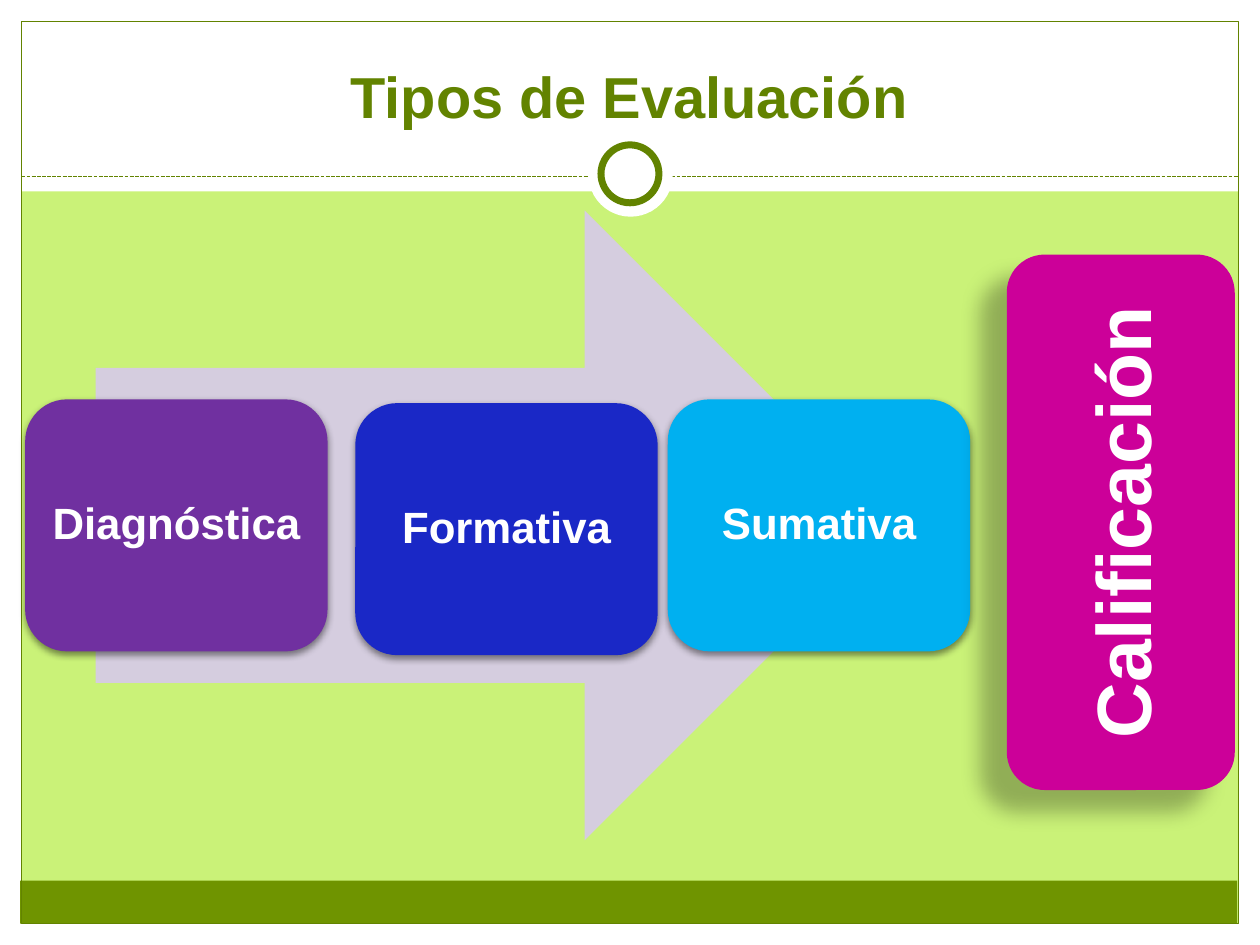
"""Build the slide on types of evaluation."""
from dataclasses import dataclass
from typing import Optional

from lxml.etree import SubElement
from pptx import Presentation
from pptx.dml.color import RGBColor
from pptx.enum.dml import MSO_LINE
from pptx.enum.shapes import MSO_CONNECTOR, MSO_SHAPE as Preset
from pptx.enum.text import MSO_ANCHOR as Anchor, PP_ALIGN as Align
from pptx.oxml.ns import qn
from pptx.util import Inches, Pt

WHITE = RGBColor(0xFF, 0xFF, 0xFF)
LIME = RGBColor(0xCA, 0xF2, 0x78)
OLIVE = RGBColor(0x6F, 0x94, 0x00)
DARK_OLIVE = RGBColor(0x62, 0x83, 0x00)
LAVENDER = RGBColor(0xD5, 0xCD, 0xDF)
PURPLE = RGBColor(0x70, 0x30, 0xA0)
BLUE = RGBColor(0x1A, 0x28, 0xC6)
SKY = RGBColor(0x00, 0xB0, 0xF0)
MAGENTA = RGBColor(0xCC, 0x00, 0x99)

Bounds = tuple[float, float, float, float]


@dataclass(frozen=True)
class Shadow:
    opacity: int
    blur: float
    distance: float
    angle: int


@dataclass(frozen=True)
class Block:
    bounds: Bounds
    preset: Preset = Preset.RECTANGLE
    fill: Optional[RGBColor] = None
    line: Optional[RGBColor] = None
    width: float = 0.75
    shadow: Optional[Shadow] = None


@dataclass(frozen=True)
class Stage:
    label: str
    left: float
    top: float
    color: RGBColor


SOFT = Shadow(45, 4, 2, 90)
DEEP = Shadow(28, 11.8, 19.7, 141)
CARD_WIDTH, CARD_HEIGHT, INSET = 2.4, 2, 0.1

FRAME = [
    Block((0, 7.33, 10, 0.17), fill=WHITE),
    Block((0, 0, 10, 1.52), fill=WHITE),
    Block((0, 0, 0.17, 7.5), fill=WHITE),
    Block((9.83, 0, 0.17, 7.5), fill=WHITE),
    Block((0.16, 6.99, 9.66, 0.34), fill=OLIVE),
    Block((0.17, 0.17, 9.66, 7.16), line=DARK_OLIVE),
]
RING = [
    Block((4.67, 1.05, 0.67, 0.67), Preset.OVAL, WHITE),
    Block((4.77, 1.15, 0.46, 0.46), Preset.OVAL, WHITE, DARK_OLIVE, 4),
]
ARROW = Block((0.76, 1.67, 6.38, 5), Preset.RIGHT_ARROW, LAVENDER)
GRADE = Block((7.99, 2.02, 1.81, 4.25), Preset.ROUNDED_RECTANGLE, MAGENTA, shadow=DEEP)
STAGES = [
    Stage("Diagnóstica", 0.2, 3.17, PURPLE),
    Stage("Formativa", 2.82, 3.2, BLUE),
    Stage("Sumativa", 5.3, 3.17, SKY),
]


def add_shadow(shape, shadow: Shadow) -> None:
    effects = shape._element.spPr.find(qn("a:effectLst"))
    outer = SubElement(effects, qn("a:outerShdw"), {
        "blurRad": str(Pt(shadow.blur)),
        "dist": str(Pt(shadow.distance)),
        "dir": str(shadow.angle * 60000),
        "algn": "ctr",
        "rotWithShape": "0",
    })
    color = SubElement(outer, qn("a:srgbClr"), val="000000")
    SubElement(color, qn("a:alpha"), val=str(shadow.opacity * 1000))


def draw_block(page, block: Block):
    shape = page.shapes.add_shape(block.preset, *map(Inches, block.bounds))
    shape.shadow.inherit = False
    if block.fill is None:
        shape.fill.background()
    else:
        shape.fill.solid()
        shape.fill.fore_color.rgb = block.fill
    if block.line is None:
        shape.line.fill.background()
    else:
        shape.line.color.rgb = block.line
        shape.line.width = Pt(block.width)
    if block.shadow:
        add_shadow(shape, block.shadow)
    return shape


def draw_divider(page) -> None:
    ends = map(Inches, (0.17, 1.4, 9.83, 1.4))
    divider = page.shapes.add_connector(MSO_CONNECTOR.STRAIGHT, *ends)
    divider.line.color.rgb = DARK_OLIVE
    divider.line.width = Pt(0.75)
    divider.line.dash_style = MSO_LINE.SQUARE_DOT
    SubElement(divider._element.spPr, qn("a:effectLst"))


def write(box, text: str, size: int, color: RGBColor = WHITE,
          anchor: Anchor = Anchor.MIDDLE, spacing: float = 1.0) -> None:
    frame = box.text_frame
    frame.word_wrap = True
    frame.vertical_anchor = anchor
    para = frame.paragraphs[0]
    para.alignment = Align.CENTER
    para.line_spacing = spacing
    span = para.add_run()
    span.text = text
    formats = {"name": "Arial", "size": Pt(size), "bold": True}
    for name, value in formats.items():
        setattr(span.font, name, value)
    span.font.color.rgb = color


def draw_stage(page, stage: Stage) -> None:
    card = (stage.left, stage.top, CARD_WIDTH, CARD_HEIGHT)
    draw_block(page, Block(card, Preset.ROUNDED_RECTANGLE, stage.color, shadow=SOFT))
    inner = (stage.left + INSET, stage.top + INSET,
             CARD_WIDTH - 2 * INSET, CARD_HEIGHT - 2 * INSET)
    box = page.shapes.add_textbox(*map(Inches, inner))
    for side in ("left", "top", "right", "bottom"):
        setattr(box.text_frame, f"margin_{side}", Inches(INSET))
    write(box, stage.label, 25, spacing=0.9)


def main() -> None:
    deck = Presentation()
    deck.slide_width, deck.slide_height = Inches(10), Inches(7.5)
    page = deck.slides.add_slide(deck.slide_layouts[6])
    page.background.fill.solid()
    page.background.fill.fore_color.rgb = LIME

    for block in FRAME:
        draw_block(page, block)
    draw_divider(page)
    for block in RING:
        draw_block(page, block)

    title = page.shapes.add_textbox(*map(Inches, (0.33, 0.25, 9.33, 0.83)))
    write(title, "Tipos de Evaluación", 33, DARK_OLIVE, Anchor.BOTTOM)

    draw_block(page, ARROW)
    for stage in STAGES:
        draw_stage(page, stage)

    grade = draw_block(page, GRADE)
    write(grade, "Calificación", 44)
    grade.text_frame._txBody.bodyPr.set("vert", "vert270")
    deck.save("out.pptx")


if __name__ == "__main__":
    main()
